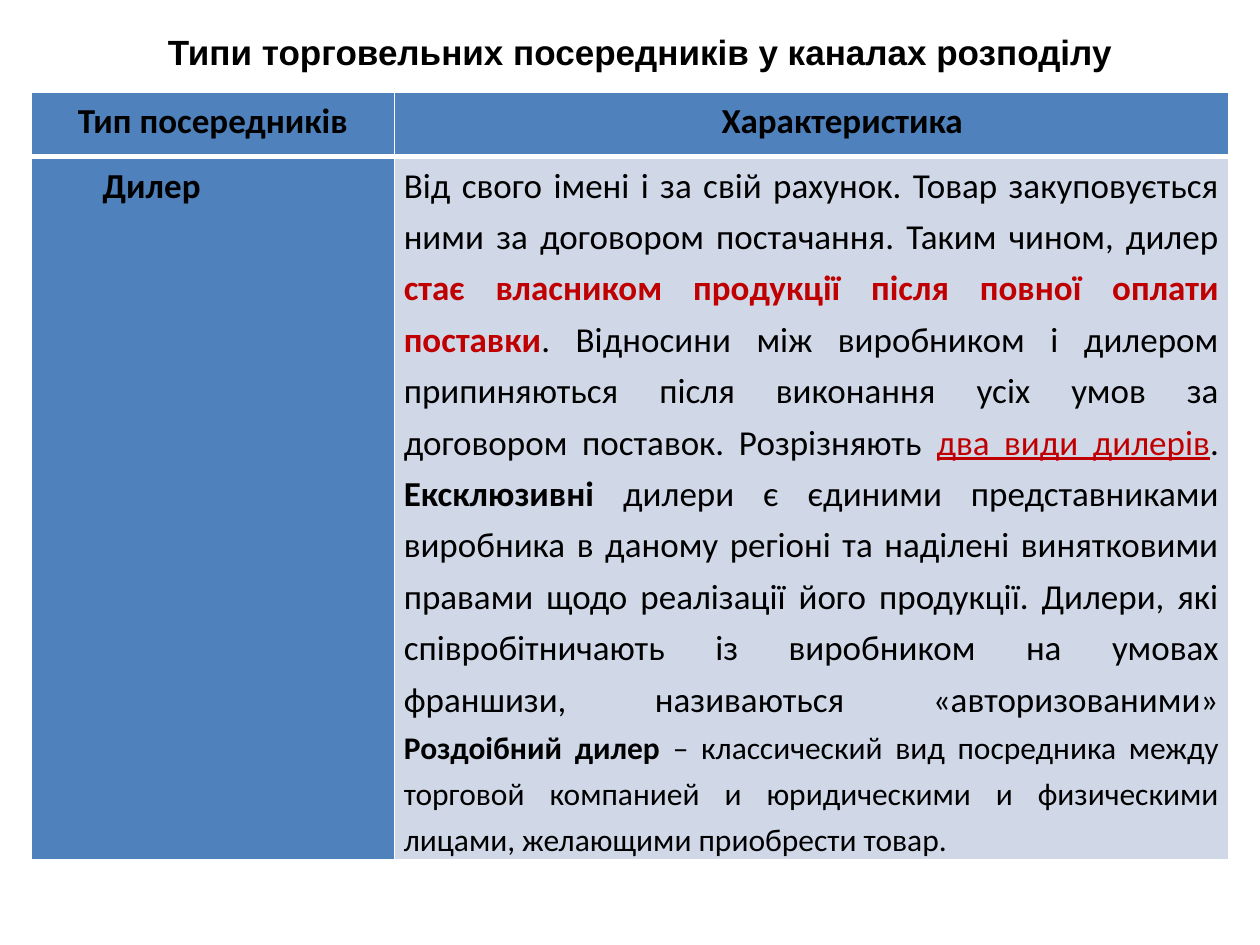
from dataclasses import dataclass

from lxml.etree import fromstring
from pptx import Presentation
from pptx.dml.color import RGBColor
from pptx.enum.text import MSO_ANCHOR, MSO_AUTO_SIZE, PP_ALIGN
from pptx.util import Inches, Pt

NAMESPACE = "http://schemas.openxmlformats.org/drawingml/2006/main"


@dataclass(frozen=True)
class Theme:
    """Colours, fonts and type sizes of the slide."""
    ink: str = "000000"
    accent: str = "C00000"
    line: str = "FFFFFF"
    heading_fill: str = "4F81BD"
    body_fill: str = "D0D8E8"
    title_font: str = "Arial"
    table_font: str = "Calibri"
    size: int = 20
    small: int = 18
    indent: float = 0.49
    spacing: float = 1.2
    cell_margin: float = 5.4


THEME = Theme()
SLIDE_SIZE = (10, 7.5)
COLUMNS = (2.88, 6.62)
ROWS = (0.51, 5.58)
BOLD = {"bold": True}
SMALL = {"size": THEME.small}

TITLE = "Типи торговельних посередників у каналах розподілу"
HEADINGS = ("Тип посередників", "Характеристика")
DEALER = "Дилер"
DESCRIPTION = (
    ("Від свого імені і за свій рахунок. Товар закуповується ними за договором "
     "постачання. Таким чином, дилер ", {}),
    ("стає власником продукції після повної оплати поставки",
     {"bold": True, "color": THEME.accent}),
    (". Відносини між виробником і дилером припиняються після виконання усіх умов "
     "за договором поставок. Розрізняють ", {}),
    ("два види дилерів", {"underline": True, "color": THEME.accent}),
    (". ", {}),
    ("Ексклюзивні ", BOLD),
    ("дилери є єдиними представниками виробника в даному регіоні та наділені "
     "винятковими правами щодо реалізації його продукції. Дилери, які "
     "співробітничають із виробником на умовах франшизи, називаються "
     "«авторизованими»", {}),
    (" ", SMALL),
    ("Роздоібний дилер ", BOLD | SMALL),
    ("– классический вид посредника между торговой компанией и юридическими и "
     "физическими лицами, желающими приобрести товар.", SMALL),
)


def style_span(span, font=THEME.table_font, size=THEME.size, color=THEME.ink,
               bold=False, underline=False):
    """Format one run of text."""
    span.font.name = font
    span.font.size = Pt(size)
    span.font.color.rgb = RGBColor.from_string(color)
    span.font.bold = bold
    span.font.underline = underline


def write_para(para, spans, align, indent=0):
    """Fill a paragraph with formatted runs."""
    para.alignment = align
    properties = para._p.get_or_add_pPr()
    properties.set("marL", "0")
    properties.set("indent", str(Inches(indent)))
    for text, style in spans:
        span = para.add_run()
        span.text = text
        style_span(span, **style)


def set_borders(cell, bottom):
    """Draw solid lines around a cell."""
    properties = cell._tc.get_or_add_tcPr()
    widths = {"L": 1, "R": 1, "T": 1, "B": bottom}
    for position, (side, width) in enumerate(widths.items()):
        properties.insert(position, fromstring(
            f'<a:ln{side} xmlns:a="{NAMESPACE}" w="{Pt(width)}"><a:solidFill>'
            f'<a:srgbClr val="{THEME.line}"/></a:solidFill></a:ln{side}>'))


def write_cell(cell, spans, align, fill=THEME.heading_fill, indent=0, bottom=1):
    """Fill, frame and write one table cell."""
    cell.margin_left = cell.margin_right = Pt(THEME.cell_margin)
    cell.margin_top = cell.margin_bottom = 0
    cell.fill.solid()
    cell.fill.fore_color.rgb = RGBColor.from_string(fill)
    set_borders(cell, bottom)
    para = cell.text_frame.paragraphs[0]
    para.line_spacing = THEME.spacing
    write_para(para, spans, align, indent)


def add_title(page):
    """Place the slide title in its placeholder."""
    box = page.shapes.title
    box.left, box.top, box.width, box.height = map(Inches, (0.25, 0.19, 9.17, 0.44))
    frame = box.text_frame
    frame.word_wrap = True
    frame.auto_size = MSO_AUTO_SIZE.SHAPE_TO_FIT_TEXT
    frame.vertical_anchor = MSO_ANCHOR.MIDDLE
    spans = [(TITLE, BOLD | {"font": THEME.title_font})]
    write_para(frame.paragraphs[0], spans, PP_ALIGN.CENTER, THEME.indent)


def add_dealer_table(page):
    """Add the table of intermediary types."""
    area = map(Inches, (0.25, 0.73, sum(COLUMNS), sum(ROWS)))
    table = page.shapes.add_table(len(ROWS), len(COLUMNS), *area).table
    for column, width in zip(table.columns, COLUMNS):
        column.width = Inches(width)
    for row, height in zip(table.rows, ROWS):
        row.height = Inches(height)
    for index, heading in enumerate(HEADINGS):
        write_cell(table.cell(0, index), [(heading, BOLD)], PP_ALIGN.CENTER,
                   indent=index * THEME.indent, bottom=3)
    write_cell(table.cell(1, 0), [(DEALER, BOLD)], PP_ALIGN.JUSTIFY,
               indent=THEME.indent)
    write_cell(table.cell(1, 1), DESCRIPTION, PP_ALIGN.JUSTIFY, THEME.body_fill)


def main():
    """Build and save the deck."""
    deck = Presentation()
    deck.slide_width, deck.slide_height = map(Inches, SLIDE_SIZE)
    page = deck.slides.add_slide(deck.slide_layouts.get_by_name("Title Only"))
    add_dealer_table(page)
    add_title(page)
    deck.save("out.pptx")


if __name__ == "__main__":
    main()
